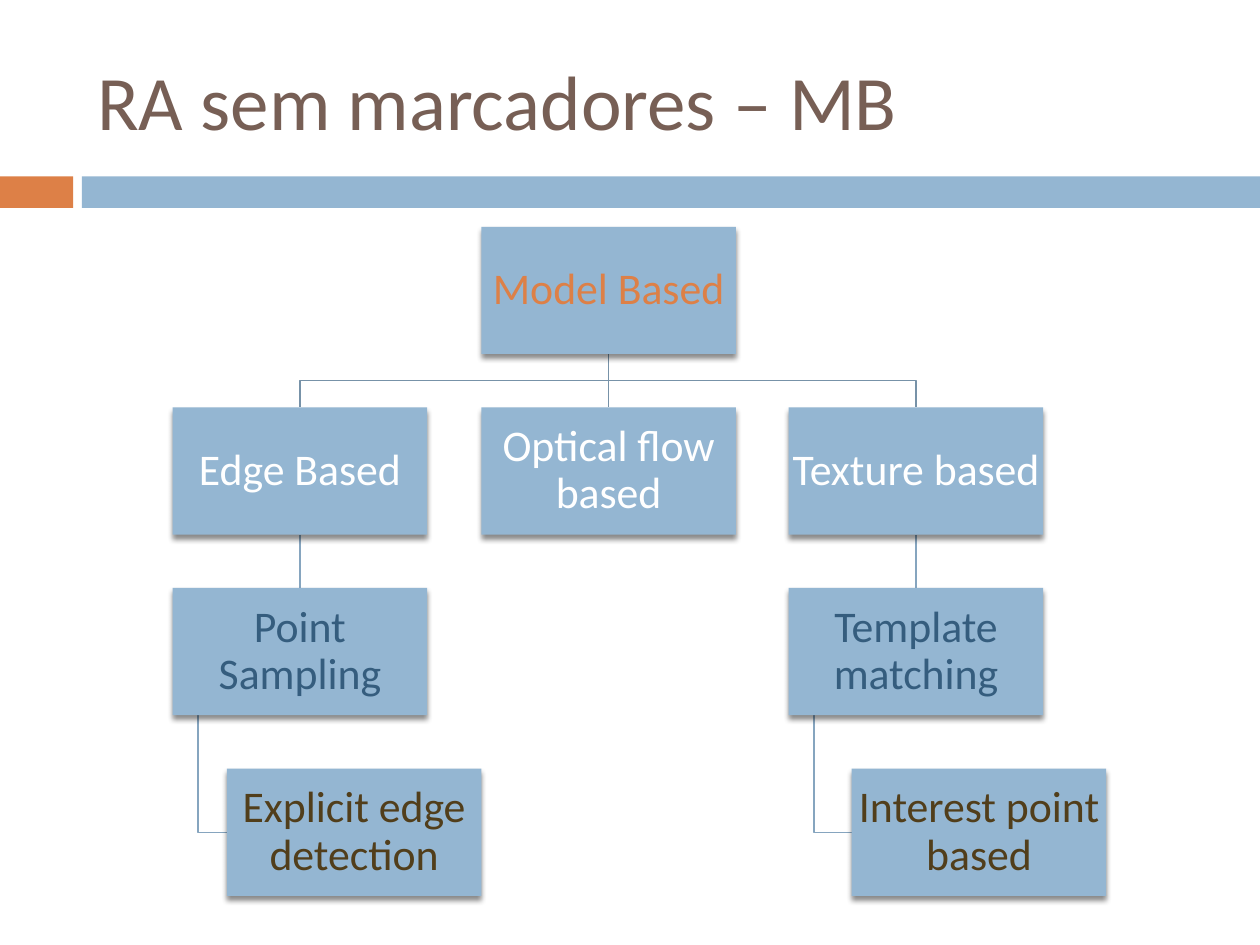
"""Builds the slide with the tree of model-based markerless AR methods."""
from lxml import etree
from pptx import Presentation
from pptx.dml.color import RGBColor
from pptx.enum.shapes import MSO_CONNECTOR, MSO_SHAPE
from pptx.enum.text import MSO_ANCHOR, MSO_AUTO_SIZE, PP_ALIGN
from pptx.oxml import parse_xml
from pptx.oxml.ns import nsdecls, qn
from pptx.util import Inches, Pt

RECT = MSO_SHAPE.RECTANGLE
STRAIGHT = MSO_CONNECTOR.STRAIGHT
MIDDLE = MSO_ANCHOR.MIDDLE
LEFT, CENTER = PP_ALIGN.LEFT, PP_ALIGN.CENTER
NO_FIT = MSO_AUTO_SIZE.NONE

FONT = "Calibri"
TITLE = "RA sem marcadores – MB"
COLORS = {
    "blue": "94B6D2", "orange": "DD8047", "brown": "775F55",
    "white": "FFFFFF", "navy": "355D7E", "umber": "513E1B",
    "dark line": "7792A8", "light line": "86A5BF",
}
BANDS = [(0, 0.58, "orange"), (0.65, 9.35, "blue")]
LEVELS = ["orange", "white", "navy", "umber"]
NODES = [
    ("Model Based", 3.82, 0),
    ("Edge Based", 1.37, 1),
    ("Point Sampling", 1.37, 2),
    ("Explicit edge detection", 1.8, 3),
    ("Optical flow based", 3.82, 1),
    ("Texture based", 6.26, 1),
    ("Template matching", 6.26, 2),
    ("Interest point based", 6.76, 3),
]
STEMS = [
    ("Model Based", "Optical flow based", "dark line"),
    ("Edge Based", "Point Sampling", "light line"),
    ("Texture based", "Template matching", "light line"),
]
FORKS = [("Model Based", "Edge Based"), ("Model Based", "Texture based")]
HOOKS = [
    ("Point Sampling", "Explicit edge detection"),
    ("Template matching", "Interest point based"),
]
TOP, STEP, WIDE, HIGH = 1.8, 4.3 / 3, 2.02, 1.01
SHADOW = (
    f'<a:effectLst {nsdecls("a")}><a:outerShdw blurRad="{Pt(3)}" '
    f'dist="{Pt(2.4)}" dir="5400000" rotWithShape="0"><a:srgbClr val="000000">'
    '<a:alpha val="45000"/></a:srgbClr></a:outerShdw></a:effectLst>'
)


def rgb(name):
    return RGBColor.from_string(COLORS[name])


def style(para, size, color, align):
    para.alignment = align
    para.font.name, para.font.size = FONT, Pt(size)
    para.font.color.rgb = rgb(color)


def add_rect(shapes, left, top, wide, high, color):
    rect = shapes.add_shape(RECT, *map(Inches, (left, top, wide, high)))
    rect.shadow.inherit = False
    rect.fill.solid()
    rect.fill.fore_color.rgb = rgb(color)
    rect.line.fill.background()
    return rect


def add_node(shapes, text, left, level):
    box = add_rect(shapes, left, TOP + STEP * level, WIDE, HIGH, "blue")
    props = box.element.spPr
    props.remove(props.find(qn("a:effectLst")))
    props.append(parse_xml(SHADOW))
    frame = box.text_frame
    frame.word_wrap, frame.vertical_anchor = True, MIDDLE
    frame.margin_left = frame.margin_right = Inches(0.02)
    frame.margin_top = frame.margin_bottom = Inches(0.02)
    frame.text = text
    para = frame.paragraphs[0]
    para.line_spacing = 0.9
    style(para, 25, LEVELS[level], CENTER)
    return box


def finish(shapes, link, color):
    link.line.color.rgb, link.line.width = rgb(color), Pt(0.79)
    shapes.element.insert(2, link.element)


def add_stem(shapes, start, end, color):
    link = shapes.add_connector(STRAIGHT, 0, 0, 0, 0)
    link.begin_connect(start, 2)
    link.end_connect(end, 0)
    etree.SubElement(link.element.spPr, qn("a:effectLst"))
    finish(shapes, link, color)


def add_bend(shapes, points, color):
    pen = shapes.build_freeform(*points[0])
    pen.add_line_segments(points[1:], close=False)
    link = pen.convert_to_shape()
    link.shadow.inherit = False
    link.fill.background()
    finish(shapes, link, color)


def main():
    deck = Presentation()
    deck.slide_width, deck.slide_height = Inches(10), Inches(7.5)
    shapes = deck.slides.add_slide(deck.slide_layouts[5]).shapes

    title = shapes.title
    title.left, title.top = Inches(0.67), Inches(0.25)
    title.width, title.height = Inches(8.92), Inches(1.08)
    frame = title.text_frame
    frame.text = TITLE
    frame.auto_size, frame.vertical_anchor = NO_FIT, MIDDLE
    style(frame.paragraphs[0], 44, "brown", LEFT)

    for left, wide, color in BANDS:
        add_rect(shapes, left, 1.4, wide, 0.25, color)
    boxes = {node[0]: add_node(shapes, *node) for node in NODES}

    for start, end, color in STEMS:
        add_stem(shapes, boxes[start], boxes[end], color)
    for start, end in FORKS:
        head, tail = boxes[start], boxes[end]
        x, y = head.left + head.width // 2, head.top + head.height
        far = tail.left + tail.width // 2
        mid = (y + tail.top) // 2
        add_bend(shapes, [(x, y), (x, mid), (far, mid), (far, tail.top)],
                 "dark line")
    for start, end in HOOKS:
        head, tail = boxes[start], boxes[end]
        x, y = head.left + head.width // 10, head.top + head.height
        low = tail.top + tail.height // 2
        add_bend(shapes, [(x, y), (x, low), (tail.left, low)], "light line")
    deck.save("out.pptx")


if __name__ == "__main__":
    main()
